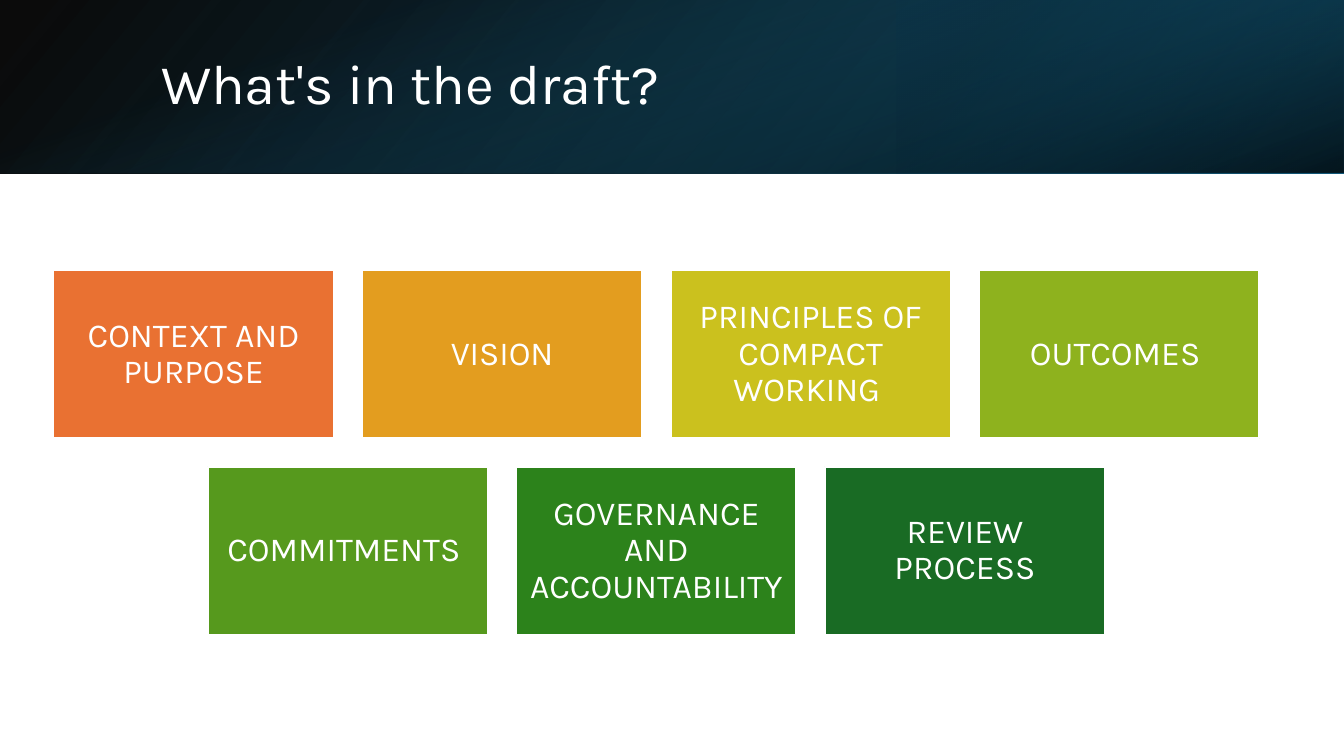
from typing import NamedTuple

from pptx import Presentation
from pptx import util as u
from pptx.dml.color import RGBColor
from pptx.enum import shapes, text
from pptx.oxml import parse_xml
from pptx.oxml.ns import nsdecls, qn

PX = 9144  # 100 px to the inch
WIDE, HIGH = 1333, 750
BAND = 172
FONT = "Karla"
HUES = {
    "white": "FFFFFF", "black": "000000", "navy": "104862",
    "ink": "0B3041", "teal": "156082", "orange": "E97132",
    "amber": "E39D1F", "yellow": "CBC11E", "lime": "8EB21E",
    "leaf": "56991D", "green": "2C821B", "forest": "196B24",
}


class Box(NamedTuple):
    left: int
    top: int
    width: int
    height: int


class Stop(NamedTuple):
    place: int  # percent along the gradient
    hue: str
    solid: int  # opacity in percent


class Layer(NamedTuple):
    box: Box
    turn: int
    flip: bool
    angle: int
    stops: tuple[Stop, ...]


class Tile(NamedTuple):
    label: str
    hue: str


LAYERS = (
    Layer(Box(0, 0, WIDE, BAND), 0, True, 140,
          (Stop(0, "black", 96), Stop(100, "navy", 100))),
    Layer(Box(889, 0, 444, BAND), 180, True, 320,
          (Stop(19, "ink", 68), Stop(100, "teal", 79))),
    # A tall bar that its quarter turn lays across the band
    Layer(Box((WIDE - BAND) // 2, (BAND - WIDE) // 2, BAND, WIDE), 90, False, 340,
          (Stop(23, "teal", 0), Stop(99, "black", 74))),
)
ROWS = (
    (Tile("CONTEXT AND PURPOSE", "orange"), Tile("VISION", "amber"),
     Tile("PRINCIPLES OF COMPACT WORKING ", "yellow"), Tile("OUTCOMES ", "lime")),
    (Tile("COMMITMENTS ", "leaf"), Tile("GOVERNANCE AND ACCOUNTABILITY", "green"),
     Tile("REVIEW PROCESS", "forest")),
)
TILE_W, TILE_H, GAP = 278, 167, 28
MID, TOP = 651, 268  # centre line and top of the tile rows


def color(hue: str) -> RGBColor:
    return RGBColor.from_string(HUES[hue])


def place(box: Box) -> list[int]:
    return [side * PX for side in box]


def add_rect(slide, box: Box):
    rect = slide.shapes.add_shape(shapes.MSO_SHAPE.RECTANGLE, *place(box))
    rect.shadow.inherit = False
    return rect


def add_layer(slide, layer: Layer) -> None:
    rect = add_rect(slide, layer.box)
    rect.rotation = layer.turn
    rect.line.fill.background()
    rect.fill.background()
    props = rect.element.spPr
    if layer.flip:
        props.find(qn("a:xfrm")).set("flipH", "1")
    stops = "".join(
        f'<a:gs pos="{stop.place * 1000}"><a:srgbClr val="{HUES[stop.hue]}">'
        f'<a:alpha val="{stop.solid * 1000}"/></a:srgbClr></a:gs>'
        for stop in layer.stops)
    blend = parse_xml(
        f'<a:gradFill {nsdecls("a")} rotWithShape="1"><a:gsLst>{stops}</a:gsLst>'
        f'<a:lin ang="{layer.angle * 60000}" scaled="0"/></a:gradFill>')
    props.replace(props.find(qn("a:noFill")), blend)


def write(shape, words: str, size: int, align: text.PP_ALIGN) -> None:
    frame = shape.text_frame
    frame.word_wrap = True
    frame.vertical_anchor = text.MSO_ANCHOR.MIDDLE
    para = frame.paragraphs[0]
    para.alignment = align
    para.line_spacing = 0.9
    run = para.add_run()
    run.text = words
    run.font.name = FONT
    run.font.size = u.Pt(size)
    run.font.color.rgb = color("white")


def add_tile(slide, tile: Tile, box: Box) -> None:
    rect = add_rect(slide, box)
    rect.fill.solid()
    rect.fill.fore_color.rgb = color(tile.hue)
    rect.line.color.rgb = color("white")
    rect.line.width = u.Pt(1.5)
    frame = rect.text_frame
    frame.margin_left = frame.margin_right = 10 * PX
    frame.margin_top = frame.margin_bottom = 10 * PX
    write(rect, tile.label, 24, text.PP_ALIGN.CENTER)


def main() -> None:
    deck = Presentation()
    deck.slide_width, deck.slide_height = WIDE * PX, HIGH * PX
    slide = deck.slides.add_slide(deck.slide_layouts[6])

    # Header band and title
    for layer in LAYERS:
        add_layer(slide, layer)
    title = slide.shapes.add_textbox(*place(Box(150, 38, 1098, 96)))
    write(title, "What's in the draft?", 40, text.PP_ALIGN.LEFT)

    # Rows of tiles, each centred on the same line
    for row, tiles in enumerate(ROWS):
        span = len(tiles) * (TILE_W + GAP) - GAP
        top = TOP + row * (TILE_H + GAP)
        for col, tile in enumerate(tiles):
            left = MID - span // 2 + col * (TILE_W + GAP)
            add_tile(slide, tile, Box(left, top, TILE_W, TILE_H))

    deck.save("out.pptx")


if __name__ == "__main__":
    main()
